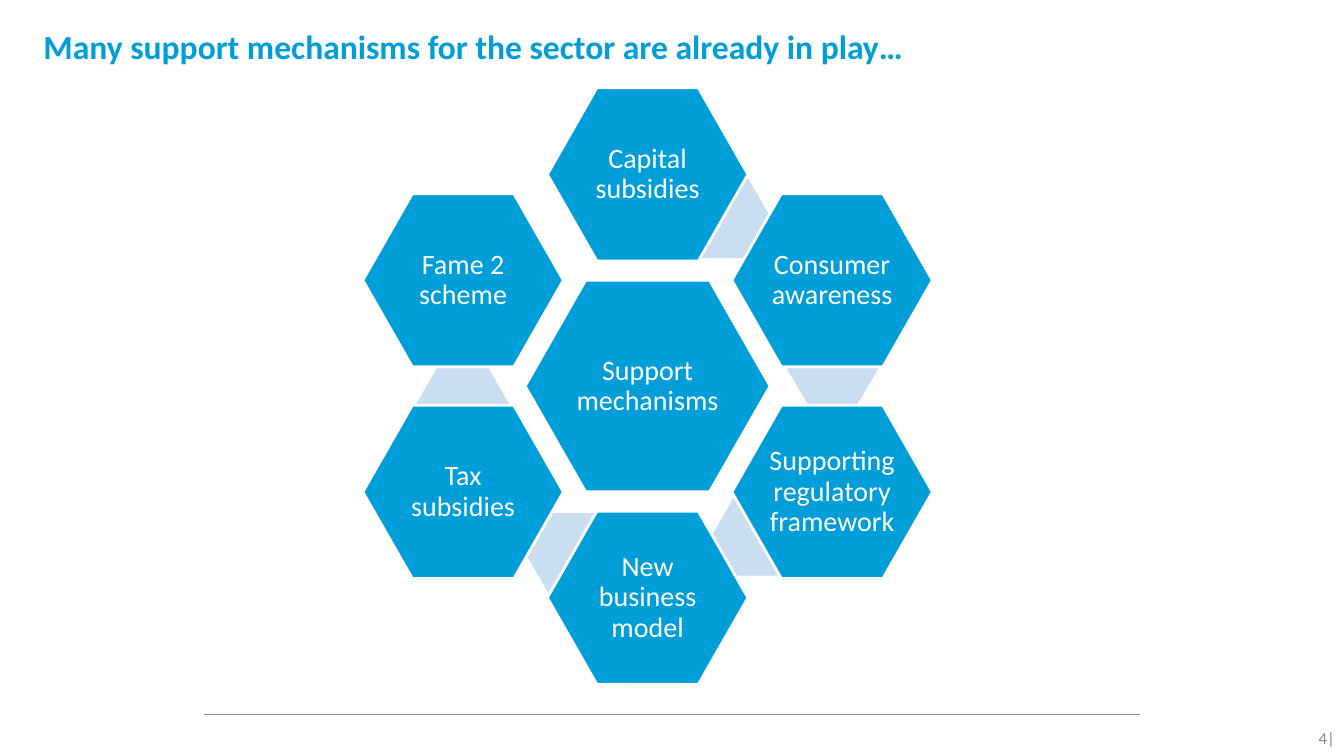
import pptx
import pptx.util
import pptx.dml.color
import pptx.enum.shapes
import pptx.enum.text
import pptx.oxml.ns
from lxml import etree

Pt = pptx.util.Pt
RGBColor = pptx.dml.color.RGBColor
HEXAGON = pptx.enum.shapes.MSO_SHAPE.HEXAGON
ALIGN = pptx.enum.text.PP_ALIGN
ANCHOR = pptx.enum.text.MSO_ANCHOR

BLUE = RGBColor(0x00, 0x9E, 0xD8)
PALE_BLUE = RGBColor(0xC9, 0xDE, 0xF0)
WHITE = RGBColor(0xFF, 0xFF, 0xFF)
RULE_GREY = RGBColor(0x8D, 0x8F, 0x93)
NUMBER_GREY = RGBColor(0x88, 0x88, 0x88)


def set_text(frame, text, size, color, align, anchor, margins):
    """Fill a text frame with one paragraph; margins are (sides, top and bottom)."""
    frame.word_wrap = True
    frame.auto_size = pptx.enum.text.MSO_AUTO_SIZE.NONE
    frame.vertical_anchor = anchor
    frame.margin_left = frame.margin_right = Pt(margins[0])
    frame.margin_top = frame.margin_bottom = Pt(margins[1])
    para = frame.paragraphs[0]
    para.text = text
    para.alignment = align
    para.font.name = "Calibri"
    para.font.size = Pt(size)
    para.font.color.rgb = color
    return para


def add_hexagon(center_x, center_y, width, height, fill, adjustment):
    hexagon = slide.shapes.add_shape(
        HEXAGON, Pt(center_x - width / 2), Pt(center_y - height / 2), Pt(width), Pt(height))
    hexagon.adjustments[0] = adjustment
    hexagon.shadow.inherit = False
    hexagon.fill.solid()
    hexagon.fill.fore_color.rgb = fill
    hexagon.line.fill.background()
    return hexagon


deck = pptx.Presentation()
deck.slide_width, deck.slide_height = Pt(960), Pt(540)
slide = deck.slides.add_slide(deck.slide_layouts[5])

# Title
title = slide.shapes.title
title.left, title.top, title.width, title.height = Pt(31), Pt(15.1), Pt(888.5), Pt(62.6)
heading = set_text(title.text_frame, "Many support mechanisms for the sector are already in play…",
                   24, BLUE, ALIGN.LEFT, ANCHOR.TOP, (0, 3.6))
heading.font.bold = True

# Footer rule and page number
rule = slide.shapes.add_connector(
    pptx.enum.shapes.MSO_CONNECTOR.STRAIGHT, Pt(145.4), Pt(510.5), Pt(814.3), Pt(510.5))
rule.line.color.rgb = RULE_GREY
rule.line.width = Pt(0.75)
etree.SubElement(rule.element.spPr, pptx.oxml.ns.qn("a:effectLst"))

number_box = slide.shapes.add_textbox(Pt(899.3), Pt(512.6), Pt(61.2), Pt(28.8))
set_text(number_box.text_frame, "4|", 12, NUMBER_GREY, ALIGN.RIGHT, ANCHOR.MIDDLE, (7.2, 3.6))

# Pale links between neighbouring hexagons, given by their centres
for link_x, link_y in [(517.7, 155.9), (594.7, 262.4), (541.4, 382.7),
                       (408.2, 394.9), (330.5, 288.4)]:
    add_hexagon(link_x, link_y, 66.2, 56.9, PALE_BLUE, 0.289)

# Central hexagon and the ring around it, in column and row steps from the centre
CENTER_X, CENTER_Y = 462.6, 275.8
COLUMN_STEP, ROW_STEP = 131.8, 75.6
CENTER_SIZE, RING_SIZE = (175, 151.2), (143.3, 123.8)
mechanisms = [
    ("Support mechanisms", 0, 0, CENTER_SIZE),
    ("Capital subsidies", 0, -2, RING_SIZE),
    ("Consumer awareness", 1, -1, RING_SIZE),
    ("Supporting regulatory framework", 1, 1, RING_SIZE),
    ("New business model", 0, 2, RING_SIZE),
    ("Tax subsidies", -1, 1, RING_SIZE),
    ("Fame 2 scheme", -1, -1, RING_SIZE),
]
for label, column, row, (width, height) in mechanisms:
    hexagon = add_hexagon(CENTER_X + column * COLUMN_STEP, CENTER_Y + row * ROW_STEP,
                          width, height, BLUE, 0.286)
    hexagon.line.color.rgb = WHITE
    hexagon.line.width = Pt(2)
    para = set_text(hexagon.text_frame, label, 20, WHITE, ALIGN.CENTER, ANCHOR.MIDDLE, (2, 2))
    para.line_spacing = 0.9

deck.save("out.pptx")
